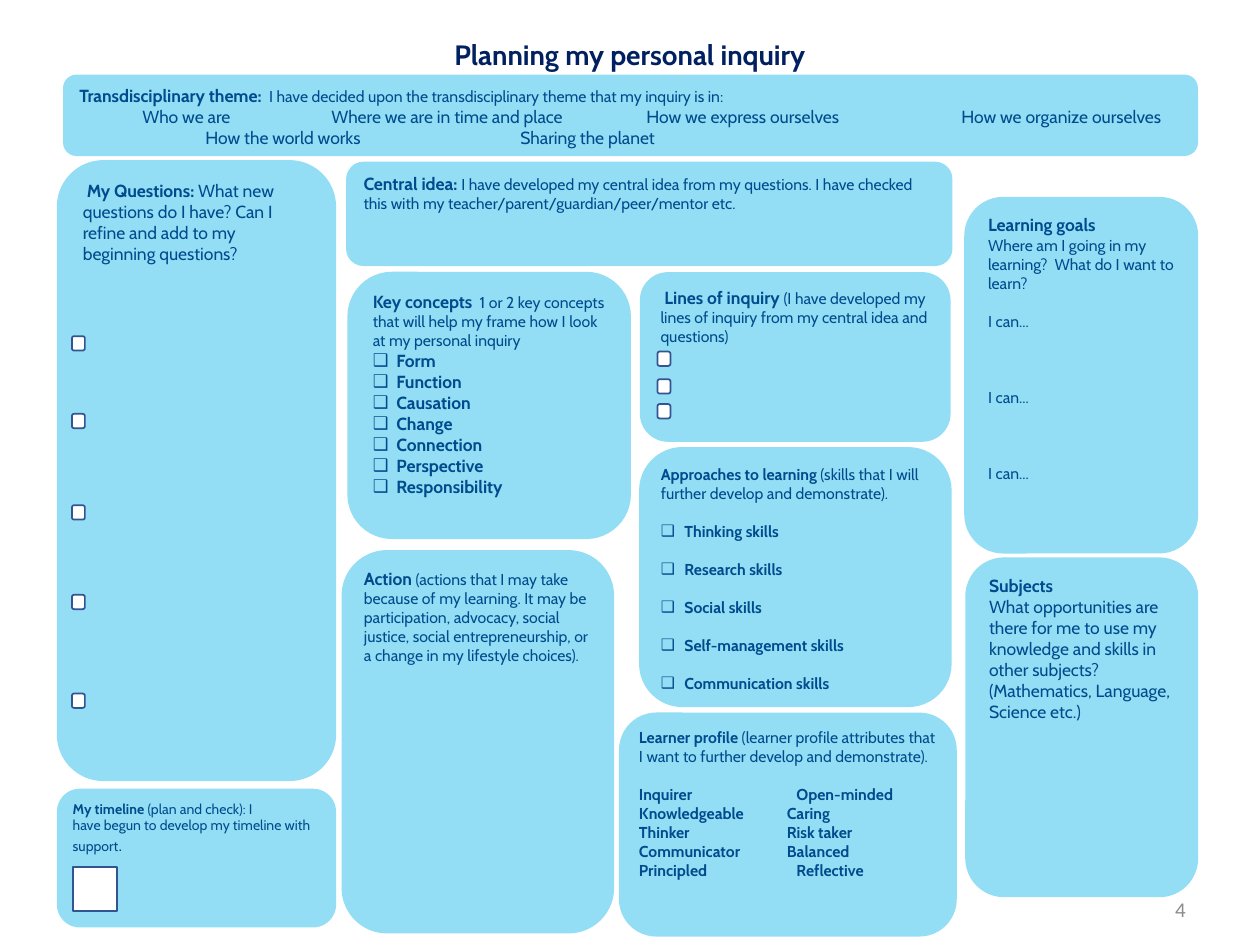
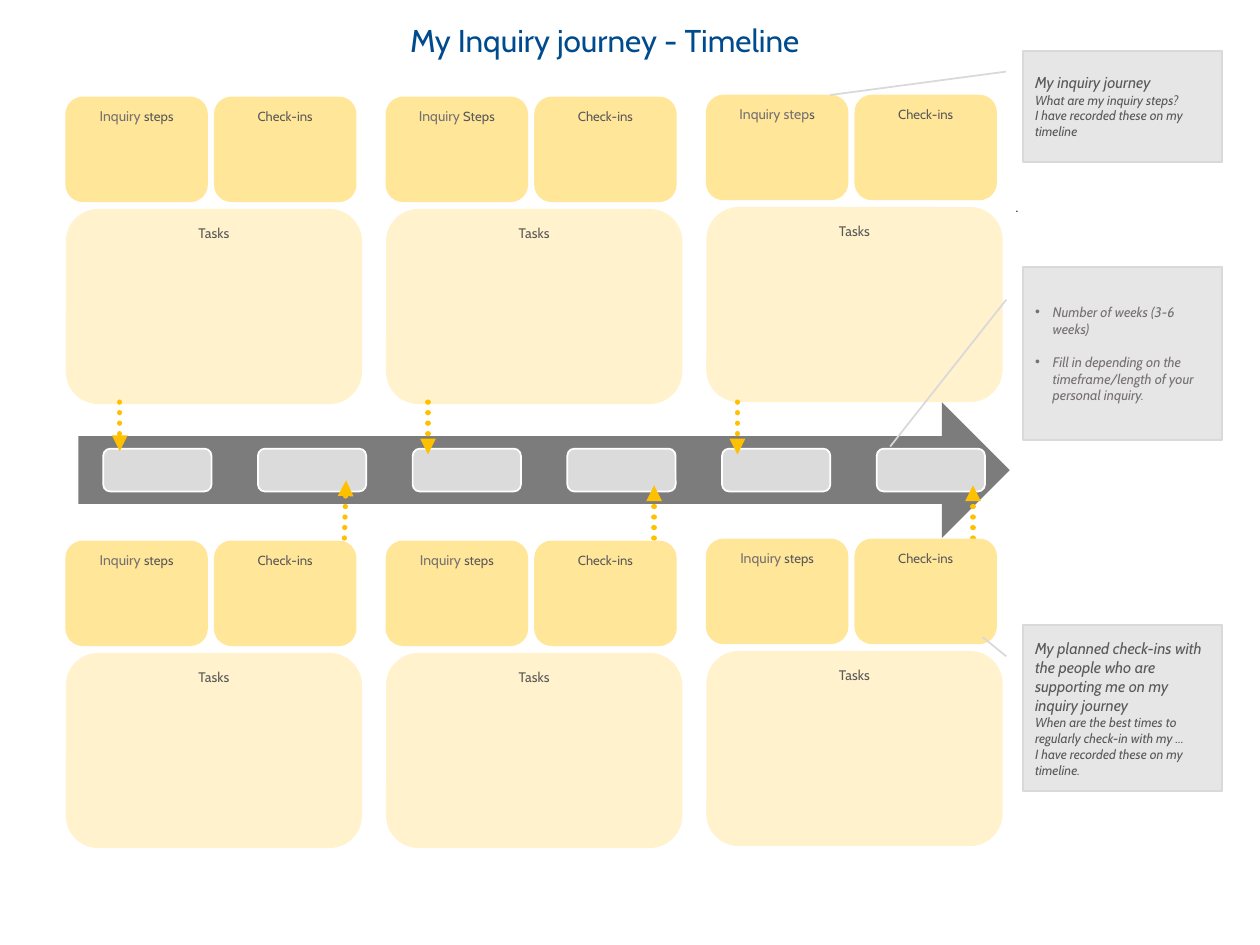
from lxml.etree import SubElement
from pptx import Presentation
from pptx.dml.color import RGBColor
from pptx.enum.dml import MSO_LINE
from pptx.enum.shapes import MSO_CONNECTOR, MSO_SHAPE
from pptx.enum.text import MSO_ANCHOR, PP_ALIGN
from pptx.oxml.ns import qn
from pptx.util import Pt

HUES = {
    "navy": "002060", "blue": "004B8D", "sky": "93DEF5", "edge": "325491",
    "white": "FFFFFF", "black": "000000", "page": "8C8C8C",
    "gold": "FFE699", "cream": "FFF2CC", "amber": "FFC000",
    "shaft": "7C7C7C", "week": "DBDBDB", "note": "E7E6E6", "rim": "D9D9D9",
    "dark": "595959", "grey": "767171",
}
ALIGN = {"left": PP_ALIGN.LEFT, "center": PP_ALIGN.CENTER, "right": PP_ALIGN.RIGHT}
LINE = 10.9


def hue(name):
    """Return the named colour."""
    return RGBColor.from_string(HUES[name])


def write(shape, text, size=9, color="blue", bold=False, italic=False, font="Cabin",
          align="left", before=0, bullet=None, hang=13.5, tabs=(), join=False):
    """Add text as a new paragraph, or join it to the last one."""
    frame = shape.text_frame
    para = frame.paragraphs[-1]
    if para.runs and not join:
        para = frame.add_paragraph()
    if not join:
        para.alignment = ALIGN[align]
        para.space_before = Pt(before)
        props = para._p.get_or_add_pPr()
        if bullet:
            props.set("marL", str(Pt(hang)))
            props.set("indent", str(-Pt(hang)))
            SubElement(props, qn("a:buFont"), typeface="Arial")
            SubElement(props, qn("a:buChar"), char=bullet)
        if tabs:
            stops = SubElement(props, qn("a:tabLst"))
            for stop in tabs:
                SubElement(stops, qn("a:tab"), pos=str(Pt(stop)), algn="l")
    run = para.add_run()
    run.text = text
    run.font.name, run.font.size = font, Pt(size)
    run.font.bold, run.font.italic = bold, italic
    run.font.color.rgb = hue(color)


def block(slide, box, fill, kind=MSO_SHAPE.ROUNDED_RECTANGLE, edge=None,
          tight=False, middle=False):
    """Draw a filled shape ready for text."""
    shape = slide.shapes.add_shape(kind, *map(Pt, box))
    shape.shadow.inherit = False
    shape.fill.solid()
    shape.fill.fore_color.rgb = hue(fill)
    if edge:
        shape.line.color.rgb = hue(edge)
        shape.line.width = Pt(1)
    else:
        shape.line.fill.background()
    frame = shape.text_frame
    frame.word_wrap = True
    frame.vertical_anchor = MSO_ANCHOR.MIDDLE if middle else MSO_ANCHOR.TOP
    if tight:
        frame.margin_left = frame.margin_right = Pt(5.2)
        frame.margin_top = frame.margin_bottom = Pt(2.7)
    return shape


def label(slide, box, text, **style):
    """Place a text box."""
    shape = slide.shapes.add_textbox(*map(Pt, box))
    shape.text_frame.word_wrap = True
    write(shape, text, **style)


def title(slide, box, text, **style):
    """Place a centred slide title."""
    label(slide, box, text, align="center", **style)


def panel(slide, box, head, body="", size=9, top=10, tight=False):
    """Draw a blue panel with a bold lead and its prompt."""
    shape = block(slide, box, "sky", tight=tight)
    write(shape, head, size=top, bold=True)
    if body:
        write(shape, body, size=size, join=True)
    return shape


def ticks(slide, box, left, drops):
    """Draw empty tick boxes down a panel."""
    for drop in drops:
        block(slide, (box[0] + left, box[1] + drop, 7.4, 8.2), "white", edge="edge")


def theme(slide, box):
    """Draw the theme band with its choices."""
    shape = panel(slide, box, "Transdisciplinary theme: ",
                  " I have decided upon the transdisciplinary theme that my inquiry is in:")
    write(shape, "\tWho we are\tWhere we are in time and place"
          "\tHow we express ourselves\tHow we organize ourselves",
          size=10, tabs=(36, 144, 324, 504))
    write(shape, "\tHow the world works\tSharing the planet", size=10, tabs=(72, 252))


def quiz(slide, box):
    """Draw the questions panel."""
    panel(slide, box, " My Questions: ", "What new questions do I have? "
          "Can I refine and add to my beginning questions?", size=10)
    ticks(slide, box, 8.6, (100.6, 145, 197.2, 248.4, 304.8))


def ideas(slide, box):
    """Draw the key concepts panel."""
    shape = panel(slide, box, "Key concepts ", " 1 or 2 key concepts that will help "
                  "my frame how I look at my personal inquiry")
    for name in ("Form", "Function", "Causation", "Change", "Connection",
                 "Perspective", "Responsibility"):
        write(shape, name, size=10, bold=True, bullet="❑")


def lines(slide, box):
    """Draw the lines of inquiry panel."""
    panel(slide, box, " Lines of inquiry ", "(I have developed my lines of inquiry "
          "from my central idea and questions)")
    ticks(slide, box, 10.1, (45.4, 61.2, 75.4))


def goals(slide, box):
    """Draw the learning goals panel."""
    shape = panel(slide, box, "Learning goals")
    write(shape, "Where am I going in my learning?  What do I want to learn?")
    for gap in (1, 3, 3):
        write(shape, "I can...", before=gap * LINE)


def skills(slide, box):
    """Draw the approaches to learning panel."""
    shape = panel(slide, box, "Approaches to learning ",
                  "(skills that I will further develop and demonstrate).", top=9, tight=True)
    for name in ("Thinking", "Research", "Social", "Self-management", "Communication"):
        write(shape, f"{name} skills", bold=True, bullet="❑", before=LINE)


def traits(slide, box):
    """Draw the learner profile panel."""
    shape = panel(slide, box, "Learner profile ", "(learner profile attributes that "
                  "I want to further develop and demonstrate).", top=9, tight=True)
    pairs = (("Inquirer", "Open-minded", 90), ("Knowledgeable", "Caring", 84.5),
             ("Thinker", "Risk taker", 84.5), ("Communicator", "Balanced", 84.5),
             ("Principled", "Reflective", 90))
    for row, (left, right, stop) in enumerate(pairs):
        write(shape, f"{left}\t{right}", bold=True, tabs=(stop,),
              before=0 if row else LINE)


def dates(slide, box):
    """Draw the timeline panel with its tick square."""
    shape = panel(slide, box, "My timeline ", "(plan and check): I",
                  size=8, top=8, tight=True)
    write(shape, "have begun to develop my timeline with support", size=8)
    write(shape, ".", size=10, join=True)
    block(slide, (box[0] + 9.3, box[1] + 44.6, 25.2, 25.2), "white",
          MSO_SHAPE.RECTANGLE, edge="edge")


def plan(slide):
    """Build the planning slide."""
    label(slide, (522.7, 508.5, 162, 24), "4", size=12, color="page",
          font="Calibri", align="right")
    title(slide, (0, 18, 720, 26.6), "Planning my personal inquiry",
          size=16, color="navy", bold=True)
    theme(slide, (36, 42.6, 648.6, 46.6))
    quiz(slide, (32.5, 91.5, 159.6, 354.8))
    panel(slide, (197.8, 92.4, 346.5, 59.6), "Central idea: ",
          "I have developed my central idea from my questions. I have checked this "
          "with my teacher/parent/guardian/peer/mentor etc.")
    ideas(slide, (198.5, 155.3, 162, 152.7))
    lines(slide, (365.6, 155.5, 177.6, 97))
    panel(slide, (195.2, 314.4, 155.7, 219), "Action",
          " (actions that I may take because of my learning. It may be participation, "
          "advocacy, social justice, social entrepreneurship, or a change in my "
          "lifestyle choices).", tight=True)
    goals(slide, (551, 112.5, 133.7, 203.8))
    shape = panel(slide, (551.6, 318.5, 133.1, 194.2), "Subjects")
    write(shape, "What opportunities are there for me to use my knowledge and skills "
          "in other subjects? (Mathematics, Language, Science etc.)", size=10)
    skills(slide, (365.2, 255.5, 178.6, 148.6))
    traits(slide, (353.7, 407.2, 193, 128))
    dates(slide, (32.5, 450.7, 159.6, 79.3))


def arrow(slide, start, end):
    """Draw a dotted arrow."""
    link = slide.shapes.add_connector(MSO_CONNECTOR.STRAIGHT, *map(Pt, start + end))
    link.line.color.rgb = hue("amber")
    link.line.width = Pt(3)
    link.line.dash_style = MSO_LINE.ROUND_DOT
    props = link._element.spPr
    stroke = props.find(qn("a:ln"))
    stroke.set("cap", "rnd")
    SubElement(stroke, qn("a:tailEnd"), type="triangle")
    SubElement(props, qn("a:effectLst"))


def track(slide, box):
    """Draw the time arrow with six week slots."""
    block(slide, box, "shaft", MSO_SHAPE.RIGHT_ARROW)
    for week in range(6):
        block(slide, (box[0] + 14.2 + 88.4 * week, box[1] + 26.6, 61.9, 24.5),
              "week", edge="white")


def stage(slide, left, top, first, last):
    """Draw one stage: steps, check-ins and tasks."""
    steps = block(slide, (left, top, 81.4, 60.3), "gold")
    write(steps, first, size=8, color="grey", align="center")
    write(steps, last, size=7.5, color="dark", join=True)
    checks = block(slide, (left + 84.9, top, 81.4, 60.3), "gold")
    write(checks, "Check-ins", size=7.5, color="dark", align="center")
    tasks = block(slide, (left + 0.2, top + 64.2, 169.3, 111.5), "cream")
    write(tasks, "Tasks", size=7.9, color="dark", align="center")


def note(slide, top, height, drop, reach):
    """Draw a grey note with its pointer."""
    shape = block(slide, (584.4, top, 113.7, height), "note",
                  MSO_SHAPE.LINE_CALLOUT_1, edge="rim", middle=True)
    for spot, value in enumerate((0.188, -0.083, drop, reach)):
        shape.adjustments[spot] = value
    return shape


def advice(slide, box, head, *rows):
    """Draw a note with a heading and smaller rows."""
    shape = note(slide, *box)
    write(shape, head, color="dark", italic=True)
    for row in rows:
        write(shape, row, size=7.5, color="dark", italic=True)


def route(slide):
    """Build the timeline slide."""
    title(slide, (-14.4, 8.6, 720, 41), "My Inquiry journey - Timeline", size=18)
    label(slide, (573.1, 110.9, 135.4, 15), ".", size=6.8, color="black", font="Arial")
    track(slide, (44.8, 229.8, 532.2, 77.6))
    for start, end in (((196.8, 307.5), (197.8, 274.5)),
                       ((373.8, 307.5), (373.8, 277.4)),
                       ((556, 307.5), (556, 277.4))):
        arrow(slide, start, end)
    words = ((("Inquiry ", "steps"), ("Inquiry ", "Steps"), ("Inquiry step", "s")),
             (("Inquiry ", "steps"), ("Inquiry ", "steps"), ("Inquiry", " steps")))
    for row, names in enumerate(words):
        for col, pair in enumerate(names):
            lift = 1.1 if col == 2 else 0
            stage(slide, 37.4 + 183 * col, 55.2 + 253.7 * row - lift, *pair)
    for left, end in ((68.4, 257.8), (244.6, 259.7), (421.4, 259.7)):
        arrow(slide, (left, 229.8), (left, end))
    advice(slide, (29, 63.5, 0.399, -0.967), "My inquiry journey",
           "What are my inquiry steps?", "I have recorded these on my timeline")
    weeks = note(slide, 152.8, 98.6, 1.039, -0.666)
    for gap, text in ((0, "Number of weeks (3-6 weeks)"),
                      (9.6, "Fill in depending on the timeframe/length of your "
                            "personal inquiry.")):
        write(weeks, text, size=7.9, color="grey", italic=True, bullet="•",
              hang=10.1, before=gap)
    advice(slide, (357.2, 95, 0.073, -0.201),
           "My planned check-ins with the people who are supporting me on my "
           "inquiry journey",
           "When are the best times to regularly check-in with my ...",
           "I have recorded these on my timeline.")


def main():
    """Build and save the deck."""
    deck = Presentation()
    deck.slide_width, deck.slide_height = Pt(720), Pt(540)
    for build in (plan, route):
        build(deck.slides.add_slide(deck.slide_layouts[6]))
    deck.save("out.pptx")


if __name__ == "__main__":
    main()
